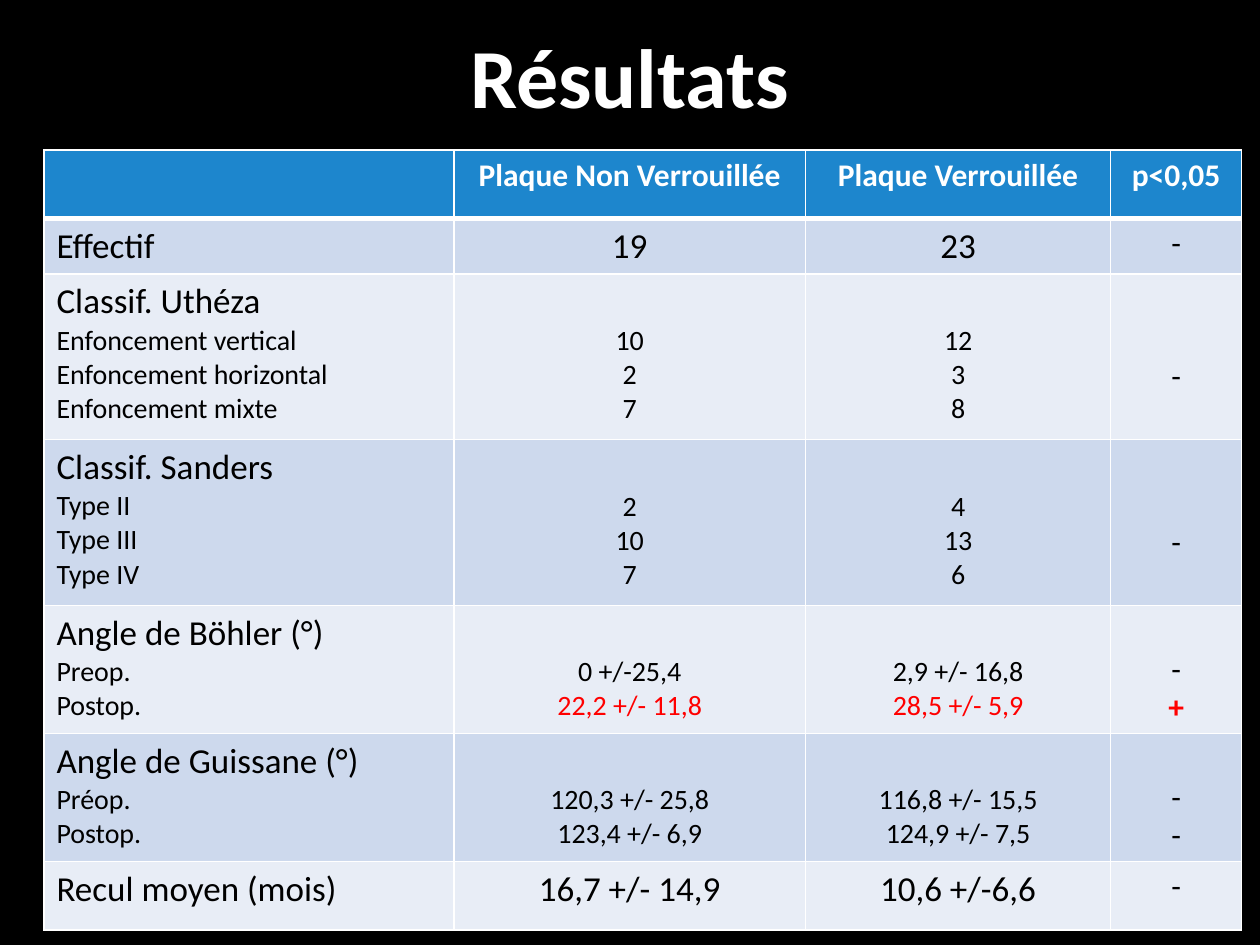
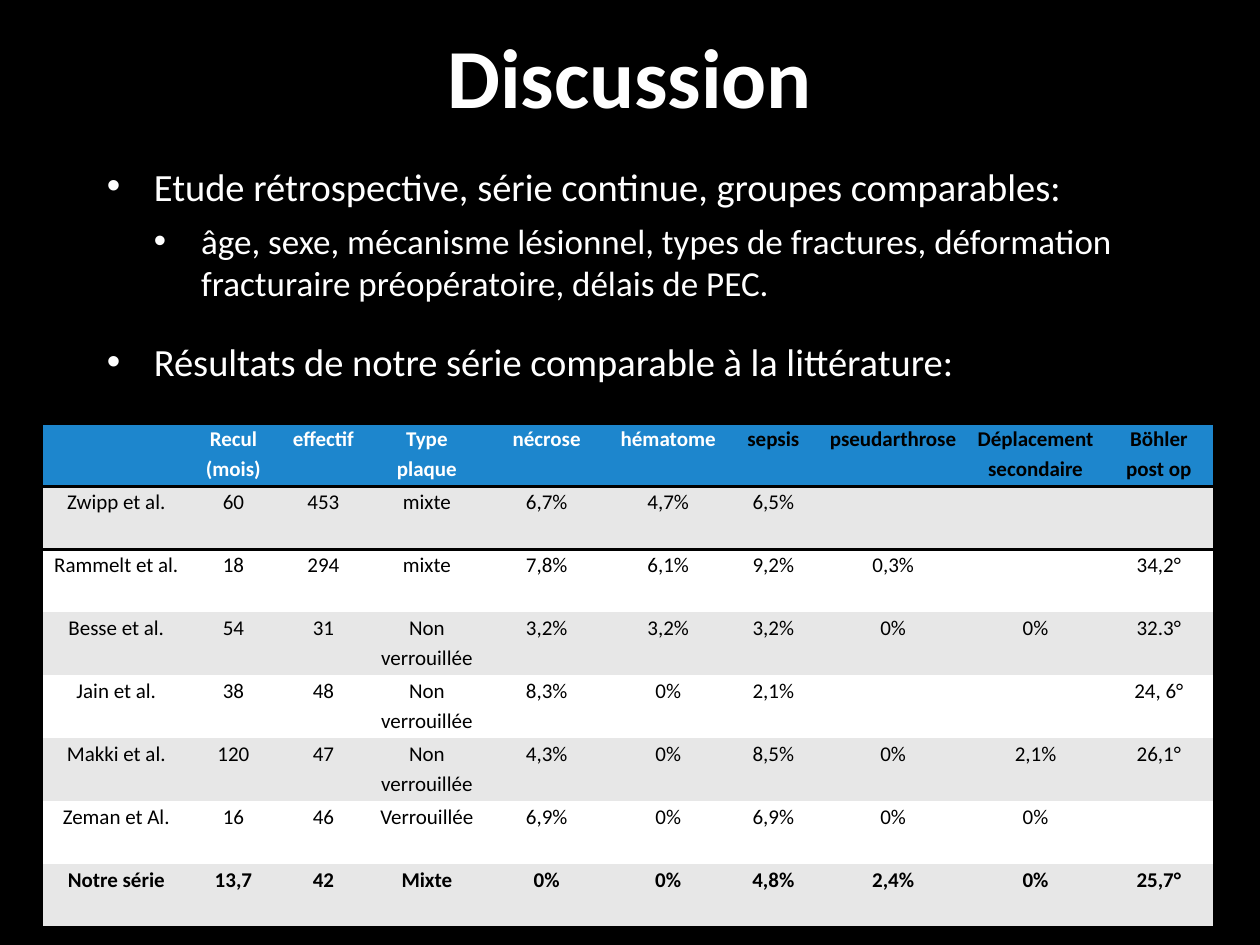
import lxml.etree
import pptx
import pptx.dml.color
import pptx.enum.text
import pptx.oxml.ns
import pptx.util

Cm = pptx.util.Cm
Pt = pptx.util.Pt
qn = pptx.oxml.ns.qn
ALIGN = pptx.enum.text.PP_ALIGN

FONT = "Calibri"
BLACK, WHITE, RED = "000000", "FFFFFF", "FF0000"
HEADER_BLUE = "1D86CD"
RESULT_BANDS = ("CDD9ED", "E8EDF6")
STUDY_BANDS = ("E7E7E7", WHITE)
PLAIN_TABLE_STYLE = "{2D5ABB26-0587-4C30-8999-92F81FD0307C}"
TITLE_BOX = (1.9, 0.33, 21.59, 2.35)

RESULT_WIDTHS = (8.26, 7.09, 6.15, 2.64)
RESULT_HEIGHTS = (1.38, 1.1, 3.34, 3.34, 2.58, 2.58, 1.38)
RESULT_HEADER = ("", "Plaque Non Verrouillée", "Plaque Verrouillée", "p<0,05")
RESULTS = (
    ("Effectif", [], ["19"], ["23"], ["-"]),
    ("Classif. Uthéza",
     ["Enfoncement vertical", "Enfoncement horizontal", "Enfoncement mixte"],
     ["10", "2", "7"], ["12", "3", "8"], ["-"]),
    ("Classif. Sanders", ["Type II", "Type III", "Type IV"],
     ["2", "10", "7"], ["4", "13", "6"], ["-"]),
    ("Angle de Böhler (°)", ["Preop.", "Postop."],
     ["0 +/-25,4", "22,2 +/- 11,8"], ["2,9 +/- 16,8", "28,5 +/- 5,9"], ["-", "+"]),
    ("Angle de Guissane (°)", ["Préop.", "Postop."],
     ["120,3 +/- 25,8", "123,4 +/- 6,9"], ["116,8 +/- 15,5", "124,9 +/- 7,5"], ["-", "-"]),
    ("Recul moyen (mois)", [], ["16,7 +/- 14,9"], ["10,6 +/-6,6"], ["-"]),
)
SIGNIFICANT = ("22,2 +/- 11,8", "28,5 +/- 5,9", "+")

STUDY_WIDTHS = (2.97, 1.75, 1.88, 2.29, 2.54, 2.36, 1.88, 2.95, 2.79, 2.18)
STUDY_ROW_HEIGHT = 1.27
FIRST_DARK_HEADING = 6
STUDIES = (
    ("", "Recul (mois)", "effectif", "Type plaque", "nécrose", "hématome", "sepsis",
     "pseudarthrose", "Déplacement secondaire", "Böhler post op"),
    ("Zwipp et al.", "60", "453", "mixte", "6,7%", "4,7%", "6,5%", "", "", ""),
    ("Rammelt et al.", "18", "294", "mixte", "7,8%", "6,1%", "9,2%", "0,3%", "", "34,2°"),
    ("Besse et al.", "54", "31", "Non verrouillée", "3,2%", "3,2%", "3,2%", "0%", "0%", "32.3°"),
    ("Jain et al.", "38", "48", "Non verrouillée", "8,3%", "0%", "2,1%", "", "", "24, 6°"),
    ("Makki et al.", "120", "47", "Non verrouillée", "4,3%", "0%", "8,5%", "0%", "2,1%", "26,1°"),
    ("Zeman et Al.", "16", "46", "Verrouillée", "6,9%", "0%", "6,9%", "0%", "0%", ""),
    ("Notre série", "13,7", "42", "Mixte", "0%", "0%", "4,8%", "2,4%", "0%", "25,7°"),
)

DISCUSSION_POINTS = (
    (0, "Etude rétrospective, série continue, groupes comparables:"),
    (1, "âge, sexe, mécanisme lésionnel, types de fractures, déformation "
        "fracturaire préopératoire, délais de PEC."),
    (0, "Résultats de notre série comparable à la littérature:"),
)


def color(value):
    """Return the colour for a hex string."""
    return pptx.dml.color.RGBColor.from_string(value)


def write(frame, text, size=18, ink=BLACK, bold=False, align=ALIGN.CENTER,
          spacing=1.0, before=0, level=None):
    """Add one formatted paragraph to a text frame, bulleted if it has a level."""
    first = not frame.paragraphs[0].runs
    paragraph = frame.paragraphs[0] if first else frame.add_paragraph()
    paragraph.alignment = align
    paragraph.line_spacing = spacing
    paragraph.space_before = Pt(0 if first else before)
    if level is not None:
        paragraph.level = level
        properties = paragraph._p.get_or_add_pPr()
        properties.set("marL", str(Cm(0.95 * (level + 1))))
        properties.set("indent", str(-Cm(0.95)))
        lxml.etree.SubElement(properties, qn("a:buChar")).set("char", "•")
    run = paragraph.add_run()
    run.text = text
    run.font.name = FONT
    run.font.size = Pt(size)
    run.font.bold = bold
    run.font.color.rgb = color(ink)


def place(shape, box):
    """Move a shape to a box given in centimetres."""
    shape.left, shape.top, shape.width, shape.height = map(Cm, box)


def add_titled_slide(presentation, layout, title):
    """Add a slide with the shared title style."""
    slide = presentation.slides.add_slide(presentation.slide_layouts.get_by_name(layout))
    place(slide.shapes.title, TITLE_BOX)
    write(slide.shapes.title.text_frame, title, size=48, ink=WHITE, bold=True)
    return slide


def add_grid(slide, left, top, widths, heights):
    """Add an unstyled table with the given column widths and row heights."""
    frame = slide.shapes.add_table(len(heights), len(widths), Cm(left), Cm(top),
                                   Cm(sum(widths)), Cm(sum(heights)))
    table = frame.table
    table._tbl.tblPr.find(qn("a:tableStyleId")).text = PLAIN_TABLE_STYLE
    for column, width in zip(table.columns, widths):
        column.width = Cm(width)
    for row, height in zip(table.rows, heights):
        row.height = Cm(height)
    return table


def style_cell(cell, fill, borders, ink, sides=0.25, top=0.13, bottom=0.13):
    """Set the margins, the borders (points by side) and the fill of a cell."""
    cell.margin_left = cell.margin_right = Cm(sides)
    cell.margin_top, cell.margin_bottom = Cm(top), Cm(bottom)
    properties = cell._tc.get_or_add_tcPr()
    for side in "LRTB":
        if side in borders:
            line = lxml.etree.SubElement(properties, qn("a:ln" + side))
            line.set("w", str(Pt(borders[side])))
            solid = lxml.etree.SubElement(line, qn("a:solidFill"))
            lxml.etree.SubElement(solid, qn("a:srgbClr")).set("val", ink)
    cell.fill.solid()
    cell.fill.fore_color.rgb = color(fill)


def result_top_margin(column, labels, marks):
    """Return the margin that sets values level with their labels."""
    if column == 0 or not labels:
        return 0.13
    if column < 3:
        return 1.0
    return 0.9 if len(marks) > 1 else 1.68


def add_results_table(slide, left, top):
    """Add the comparison of both plate groups."""
    table = add_grid(slide, left, top, RESULT_WIDTHS, RESULT_HEIGHTS)
    for column, heading in enumerate(RESULT_HEADER):
        cell = table.cell(0, column)
        style_cell(cell, HEADER_BLUE, dict(L=1, R=1, T=1, B=3), WHITE)
        if heading:
            write(cell.text_frame, heading, ink=WHITE, bold=True)
    for row, (heading, labels, *groups) in enumerate(RESULTS, 1):
        borders = dict(L=1, R=1, T=3 if row == 1 else 1, B=1)
        for column, lines in enumerate([labels, *groups]):
            cell = table.cell(row, column)
            style_cell(cell, RESULT_BANDS[(row - 1) % 2], borders, WHITE,
                       top=result_top_margin(column, labels, lines))
            if column == 0:
                write(cell.text_frame, heading, size=20, align=ALIGN.LEFT)
            size = 18 if column == 3 else 16 if labels else 20
            for line in lines:
                write(cell.text_frame, line, size=size, bold=line == "+",
                      ink=RED if line in SIGNIFICANT else BLACK,
                      align=ALIGN.CENTER if column else ALIGN.LEFT)


def add_studies_table(slide, left, top):
    """Add the comparison with published series."""
    table = add_grid(slide, left, top, STUDY_WIDTHS, [STUDY_ROW_HEIGHT] * len(STUDIES))
    last = len(STUDIES) - 1
    row_borders = {0: dict(T=2, B=2), 1: dict(T=2), last: dict(B=2)}
    for row, values in enumerate(STUDIES):
        fill = STUDY_BANDS[(row - 1) % 2] if row else HEADER_BLUE
        for column, value in enumerate(values):
            cell = table.cell(row, column)
            style_cell(cell, fill, row_borders.get(row, {}), BLACK,
                       sides=0.18, top=0, bottom=0)
            if value:
                light = row == 0 and column < FIRST_DARK_HEADING
                write(cell.text_frame, value, size=12, ink=WHITE if light else BLACK,
                      bold=row in (0, last), spacing=1.15)


def add_points(slide, box):
    """Fill the body placeholder with the discussion points."""
    body = slide.placeholders[1]
    place(body, box)
    for level, text in DISCUSSION_POINTS:
        write(body.text_frame, text, size=20 if level else 22, ink=WHITE,
              align=ALIGN.LEFT, before=6 if level else 20, level=level)


def main():
    """Build and save both slides."""
    presentation = pptx.Presentation()
    presentation.slide_width, presentation.slide_height = Cm(25.4), Cm(19.05)
    background = presentation.slide_master.background.fill
    background.solid()
    background.fore_color.rgb = color(BLACK)

    results = add_titled_slide(presentation, "Title Only", "Résultats")
    add_results_table(results, 0.89, 3.02)

    discussion = add_titled_slide(presentation, "Title and Content", "Discussion")
    add_points(discussion, (1.9, 3.15, 21.59, 5.36))
    add_studies_table(discussion, 0.86, 8.53)
    presentation.save("out.pptx")


if __name__ == "__main__":
    main()
